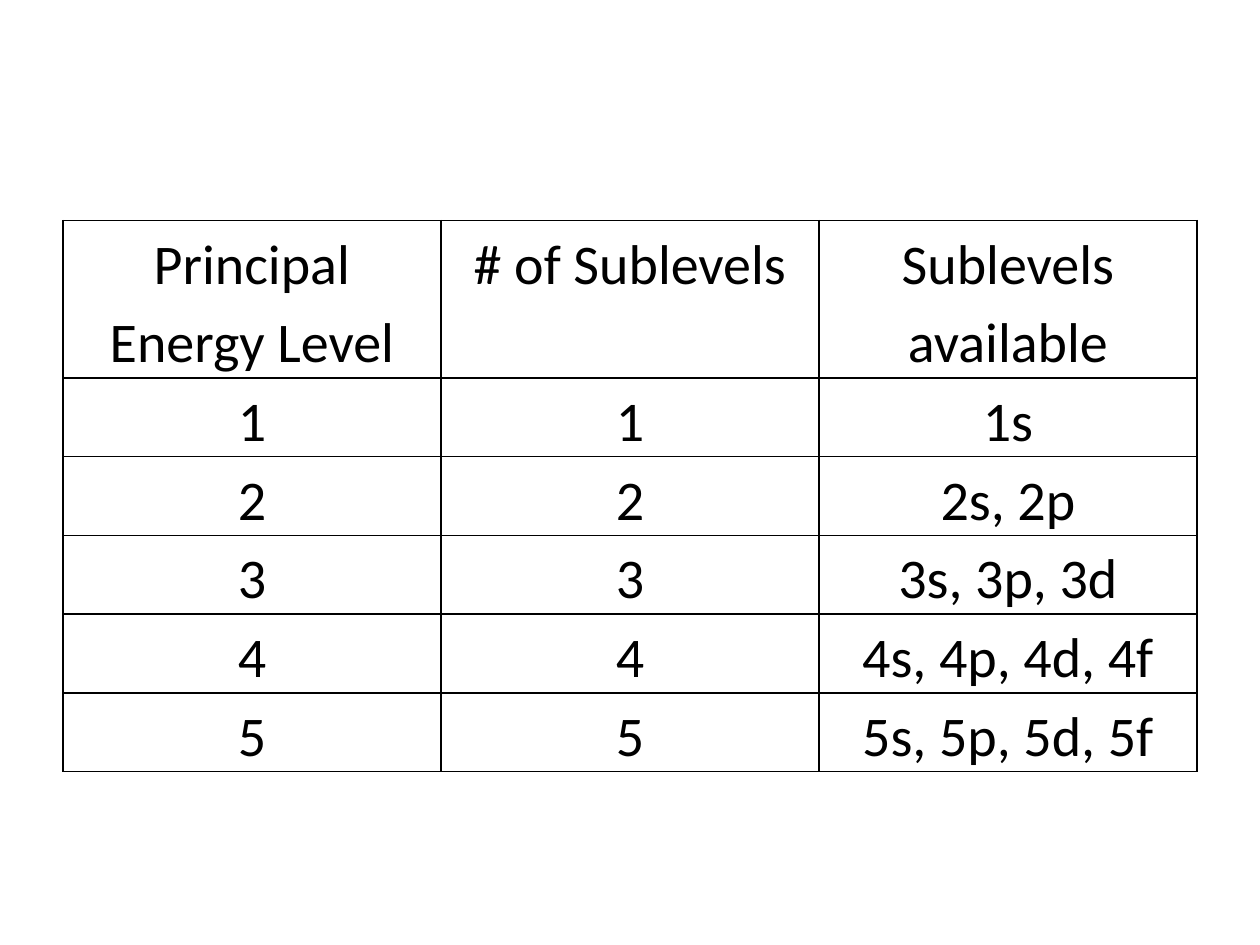
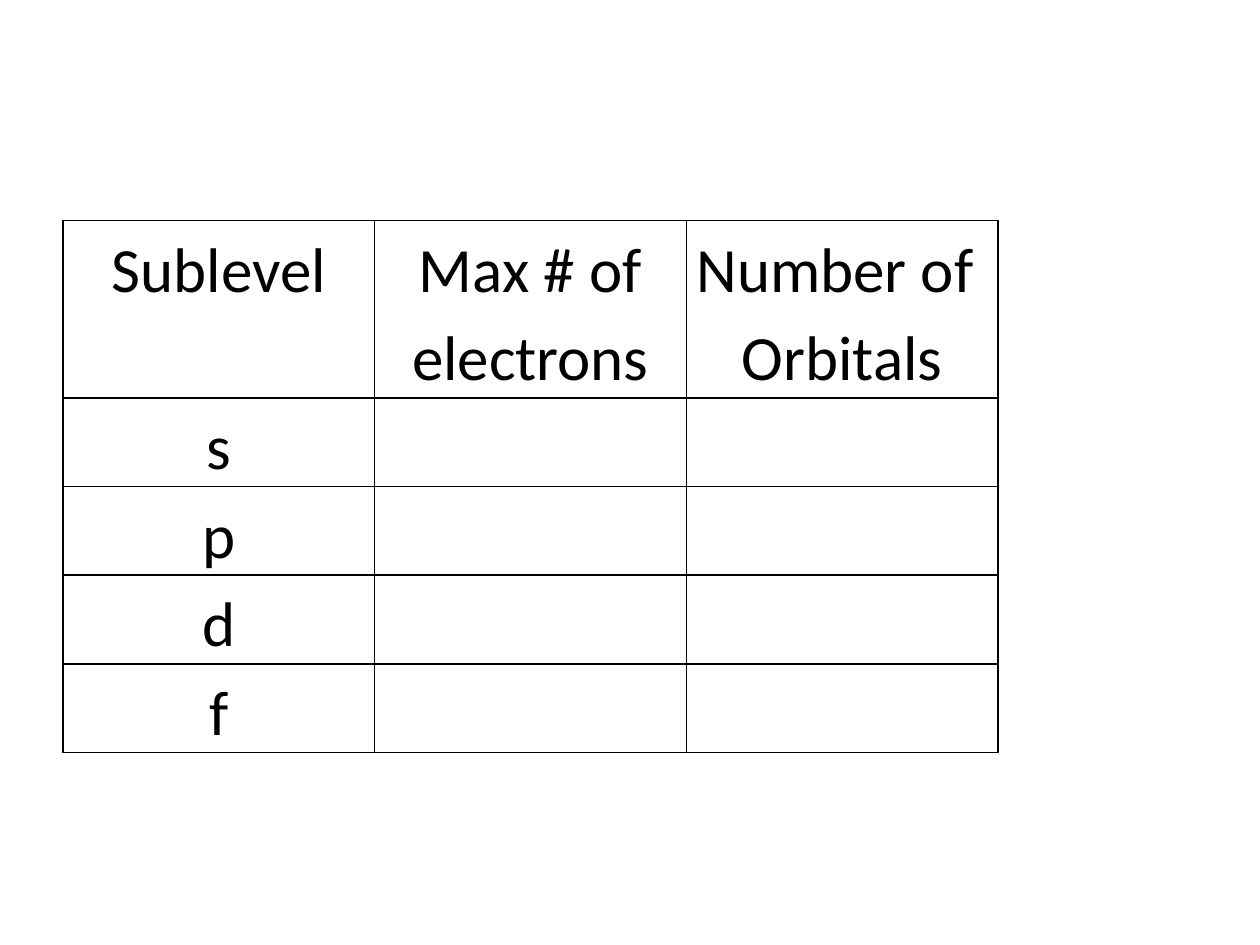
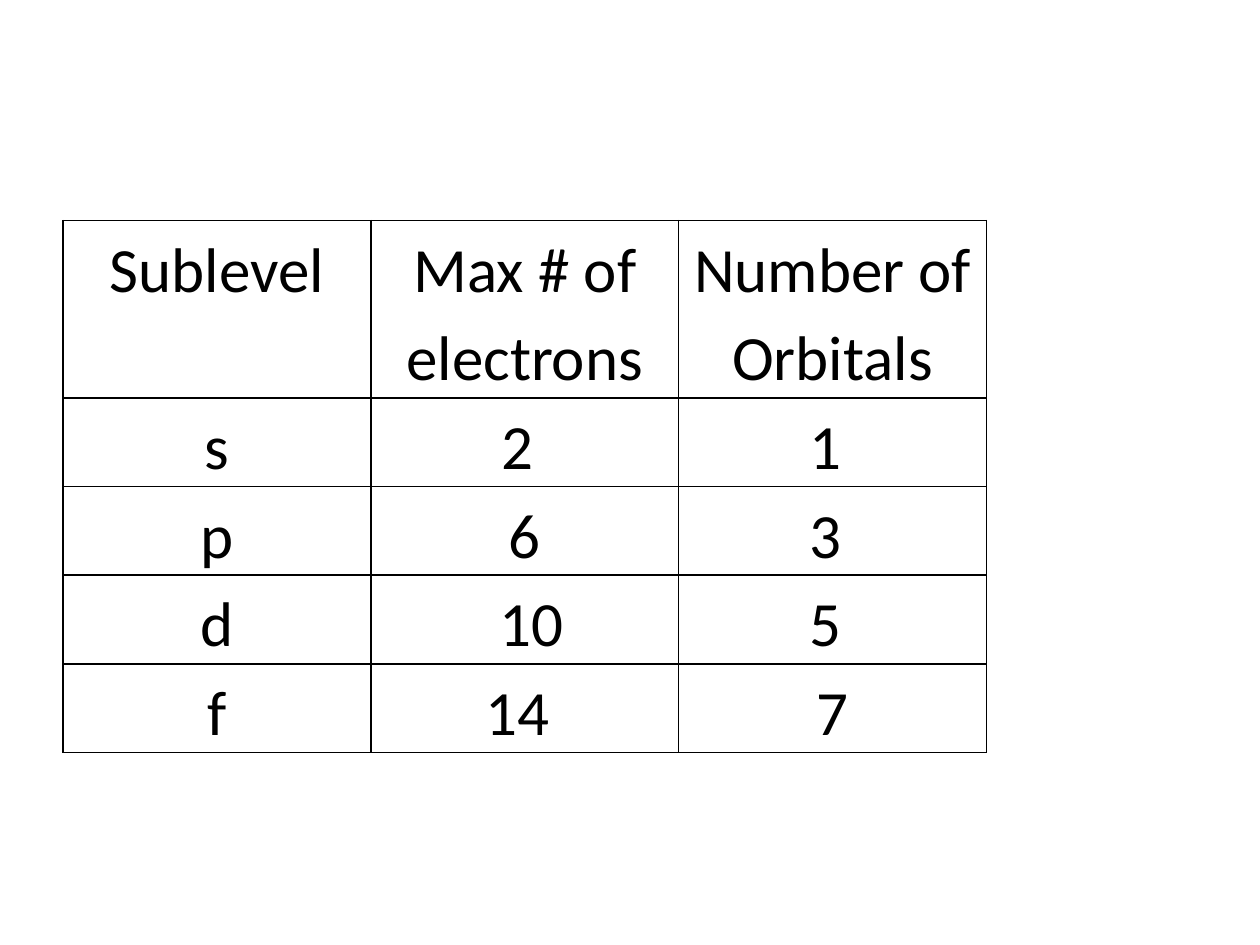
import pptx
import pptx.dml.color
import pptx.enum.text
import pptx.oxml.ns
import pptx.util
from lxml import etree

Inches = pptx.util.Inches
Pt = pptx.util.Pt

COLORS = {"text": "000000", "border": "000000", "background": "FFFFFF"}
FONT = "Calibri"
LINE_SPACING = 1.15
BORDER_WIDTH = Pt(1)
TABLE_LEFT, TABLE_TOP = 0.5, 1.75
BLANK_LAYOUT = 6

SUBLEVEL_HEADER = ["Sublevel", "Max # of electrons", "Number of \nOrbitals"]


class Deck:
    """Holds the shared style and the slide being built."""

    def __init__(self):
        self.presentation = pptx.Presentation()
        self.presentation.slide_width = Inches(10)
        self.presentation.slide_height = Inches(7.5)
        self.slide = None

    def color(self, name):
        return pptx.dml.color.RGBColor.from_string(COLORS[name])

    def add_slide(self):
        layout = self.presentation.slide_layouts[BLANK_LAYOUT]
        self.slide = self.presentation.slides.add_slide(layout)
        fill = self.slide.background.fill
        fill.solid()
        fill.fore_color.rgb = self.color("background")

    def add_table(self, rows, width, row_height, size, inset, spaces=(0, 0, 0)):
        """Draw a grid whose header is two rows tall; spaces gives each column's space before."""
        column_count = len(rows[0])
        height = row_height * (len(rows) + 1)
        table = self.slide.shapes.add_table(
            len(rows), column_count, Inches(TABLE_LEFT), Inches(TABLE_TOP),
            Inches(width), Inches(height)).table
        table.first_row = False
        table.horz_banding = False
        for column in table.columns:
            column.width = Inches(width / column_count)
        for row_index, values in enumerate(rows):
            table.rows[row_index].height = Inches(row_height * (1 if row_index else 2))
            for column_index, text in enumerate(values):
                cell = table.cell(row_index, column_index)
                cell.margin_left = cell.margin_right = Inches(inset)
                cell.margin_top = cell.margin_bottom = 0
                self.add_borders(cell)
                cell.fill.background()
                if text:
                    self.add_text(cell.text_frame, text, size, spaces[column_index])

    def add_text(self, text_frame, text, size, space_before):
        for index, line in enumerate(text.split("\n")):
            paragraph = text_frame.add_paragraph() if index else text_frame.paragraphs[0]
            paragraph.alignment = pptx.enum.text.PP_ALIGN.CENTER
            paragraph.line_spacing = LINE_SPACING
            paragraph.space_before = Pt(space_before)
            run = paragraph.add_run()
            run.text = line
            run.font.name = FONT
            run.font.size = Pt(size)
            run.font.color.rgb = self.color("text")

    def add_borders(self, cell):
        qn = pptx.oxml.ns.qn
        properties = cell._tc.get_or_add_tcPr()
        for side in ("a:lnL", "a:lnR", "a:lnT", "a:lnB"):
            line = etree.SubElement(properties, qn(side), w=str(BORDER_WIDTH))
            fill = etree.SubElement(line, qn("a:solidFill"))
            etree.SubElement(fill, qn("a:srgbClr"), val=COLORS["border"])


def energy_level_rows():
    rows = [["Principal Energy Level", "# of Sublevels", "Sublevels available"]]
    for level in range(1, 6):
        sublevels = ", ".join(f"{level}{letter}" for letter in "spdf"[:level])
        rows.append([str(level), str(level), sublevels])
    return rows


def main():
    deck = Deck()

    deck.add_slide()
    deck.add_table(energy_level_rows(), width=9, row_height=0.62, size=32,
                   inset=0.1, spaces=(6, 12, 6))

    deck.add_slide()
    unanswered = [[letter, "", ""] for letter in "spdf"]
    deck.add_table([SUBLEVEL_HEADER] + unanswered, width=7.42, row_height=0.7,
                   size=36, inset=0.07)

    deck.add_slide()
    answered = [
        ["s", "2 ", "1 "],
        ["p", "6", "3 "],
        ["d", " 10", "5 "],
        ["f", "14 ", "7"],
    ]
    deck.add_table([SUBLEVEL_HEADER] + answered, width=7.33, row_height=0.7,
                   size=36, inset=0.07)

    deck.presentation.save("out.pptx")


if __name__ == "__main__":
    main()
